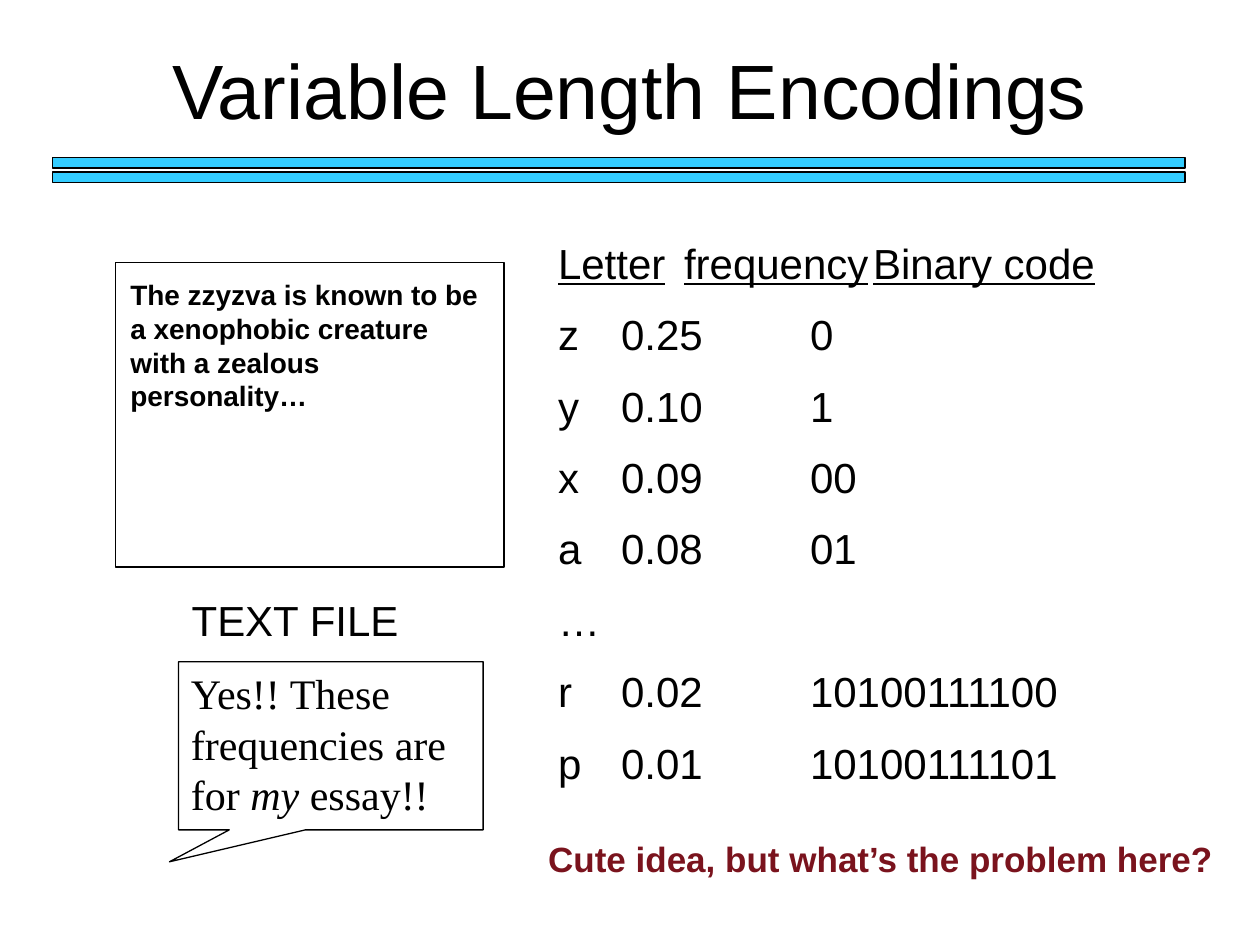
from dataclasses import dataclass

from lxml.etree import SubElement
from pptx import Presentation
from pptx.dml.color import RGBColor as RGB
from pptx.enum.shapes import MSO_SHAPE as Shape
from pptx.enum.text import MSO_ANCHOR as Anchor, PP_ALIGN as Align
from pptx.oxml.ns import qn
from pptx.util import Cm, Pt


@dataclass(frozen=True)
class Theme:
    ink: RGB = RGB(0, 0, 0)
    paper: RGB = RGB(0xFF, 0xFF, 0xFF)
    bar: RGB = RGB(0x33, 0xCC, 0xFF)
    question: RGB = RGB(0x7A, 0x13, 0x1D)
    sans: str = "Arial"
    serif: str = "Times New Roman"
    title: int = 44
    body: int = 24
    remark: int = 20
    sample: int = 16
    line: float = 0.75


def space_before_half(p):
    """Put half a line of space above the paragraph."""
    spacing = SubElement(p._p.get_or_add_pPr(), qn("a:spcBef"))
    SubElement(spacing, qn("a:spcPct")).set("val", "50000")


class SlideBuilder:
    def __init__(self, slide, theme):
        self.s = slide
        self.theme = theme

    def run(self, p, text, size, font=None, color=None, **style):
        r = p.add_run()
        r.text = text
        r.font.size = Pt(size)
        r.font.name = font or self.theme.sans
        r.font.color.rgb = color or self.theme.ink
        for name, value in style.items():
            setattr(r.font, name, value)

    def text_box(self, box, anchor=Anchor.TOP, wrap=True):
        tf = self.s.shapes.add_textbox(*map(Cm, box)).text_frame
        tf.word_wrap = wrap
        tf.vertical_anchor = anchor
        return tf

    def label(self, box, text, size, align=Align.LEFT, anchor=Anchor.TOP,
              wrap=True, spaced=False, **style):
        p = self.text_box(box, anchor, wrap).paragraphs[0]
        p.alignment = align
        if spaced:
            space_before_half(p)
        self.run(p, text, size, **style)

    def tabbed_rows(self, box, rows):
        """Write tab-separated rows, the first one underlined."""
        tf = self.text_box(box)
        for i, row in enumerate(rows):
            p = tf.add_paragraph() if i else tf.paragraphs[0]
            space_before_half(p)
            self.run(p, row, self.theme.body, underline=i == 0)

    def shape(self, kind, box, fill=None, parent=None):
        sp = (parent or self.s).shapes.add_shape(kind, *map(Cm, box))
        sp.shadow.inherit = False
        if fill is None:
            sp.fill.background()
        else:
            sp.fill.solid()
            sp.fill.fore_color.rgb = fill
        sp.line.color.rgb = self.theme.ink
        sp.line.width = Pt(self.theme.line)
        return sp

    def double_rule(self, left, top, width, height, pitch):
        group = self.s.shapes.add_group_shape()
        for i in range(2):
            self.shape(Shape.RECTANGLE, (left, top + i * pitch, width, height),
                       self.theme.bar, group)

    def callout(self, box, tip, parts):
        """Draw a speech box; parts are (text, italic) pairs."""
        sp = self.shape(Shape.RECTANGULAR_CALLOUT, box, self.theme.paper)
        sp.adjustments[0], sp.adjustments[1] = tip
        tf = sp.text_frame
        tf.word_wrap = True
        tf.vertical_anchor = Anchor.TOP
        p = tf.paragraphs[0]
        p.alignment = Align.LEFT
        for text, italic in parts:
            self.run(p, text, self.theme.body, self.theme.serif, italic=italic)


CODES = [
    "Letter\tfrequency\tBinary code",
    "z\t0.25\t\t0",
    "y \t0.10\t\t1",
    "x\t0.09\t\t00",
    "a\t0.08\t\t01",
    "…",
    "r\t0.02\t\t10100111100",
    "p\t0.01\t\t10100111101",
]


def main():
    prs = Presentation()
    prs.slide_width, prs.slide_height = Cm(25.4), Cm(19.05)
    theme = Theme()
    b = SlideBuilder(prs.slides.add_slide(prs.slide_layouts[6]), theme)

    b.label((1.9, 0.2, 21.6, 3.18), "Variable Length Encodings", theme.title,
            Align.CENTER, Anchor.MIDDLE)
    b.double_rule(1.06, 3.18, 22.83, 0.21, pitch=0.29)
    b.label((3.6, 11.85, 4.7, 1.27), "TEXT FILE", theme.body, Align.CENTER,
            wrap=False)
    b.tabbed_rows((11, 4.66, 13.55, 12.07), CODES)
    b.label((2.38, 5.48, 7.57, 2.98),
            "The zzyzva is known to be a xenophobic creature with a zealous "
            "personality…", theme.sample, spaced=True, bold=True)
    b.shape(Shape.RECTANGLE, (2.33, 5.29, 7.83, 6.14))
    b.callout((3.6, 13.34, 6.14, 3.39), (-0.53, 0.69),
              [("Yes!! These frequencies are for ", False), ("my", True),
               (" essay!!", False)])
    b.label((10.8, 16.76, 15.88, 1.1),
            "Cute idea, but what’s the problem here?", theme.remark,
            spaced=True, bold=True, color=theme.question)
    prs.save("out.pptx")


if __name__ == "__main__":
    main()
